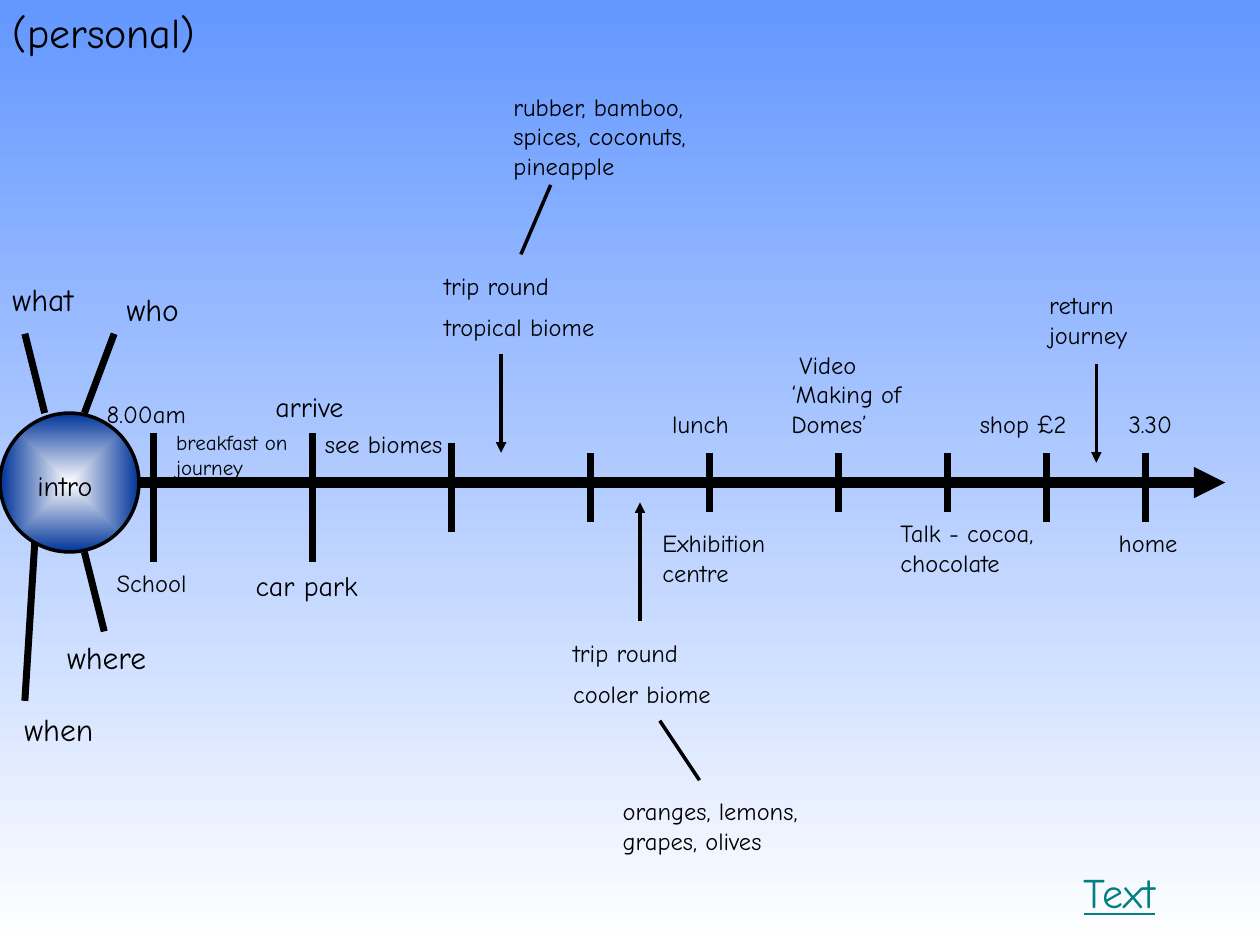
from lxml import etree
from pptx import Presentation, util as u
from pptx.dml.color import RGBColor
from pptx.enum import shapes, text
from pptx.oxml.ns import qn

# Grid: square cells, column 0 near the left edge, row 0 on the time axis
CELL = 10 / 127
LEFT, AXIS = 0.04, 3.83
FONT = "Comic Neue"
BLACK = "000000"

# Time ticks: column, cells above the axis, cells below it
TICKS = [(15, 5, 8), (31, 5, 8), (45, 4, 5), (59, 3, 4), (71, 3, 3),
         (84, 3, 3), (95, 3, 3), (105, 3, 4), (115, 3, 4)]

# Spokes of the intro circle: from column, row to column, row
SPOKES = [(4, -7, 2, -15), (8, -7, 11, -15), (2, 22, 3, 6), (10, 15, 8, 7)]
# Links from a biome to its crops
CROP_LINKS = [(52, -23, 55, -30), (66, 24, 70, 30)]
# Arrows onto the axis: column, start row, end row
ARROWS = [(50, -13, -3), (110, -12, -2), (64, 14, 2)]

# Labels: column, row, width in cells, lines, size, paragraphs
LABELS = [
    (11, -20, 17, 1, 18, ["who"]),
    (0.7, 22.3, 19, 1, 18, ["when"]),
    (5, 15, 14, 1, 18, ["where"]),
    (2, -2, 9, 1, 16, ["intro"]),
    (-0.5, -21, 11, 1, 18, ["what"]),
    (9, -9, 19, 1, 14, ["8.00am"]),
    (10, 8, 12, 1, 14, ["School"]),
    (26, -10, 13, 1, 16, ["arrive"]),
    (24, 8, 15, 1, 16, ["car park"]),
    (16, -6, 16, 2, 12, ["breakfast on journey"]),
    (31, -6, 16, 1, 14, ["see biomes"]),
    (43, -22, 21, 2, 14, ["trip round", "tropical biome"]),
    (50, -40, 27, 3, 14, ["rubber, bamboo, spices, coconuts, pineapple"]),
    (56, 15, 18, 2, 14, ["trip round", "cooler biome"]),
    (61, 31, 22, 2, 14, ["oranges, lemons, grapes, olives"]),
    (65, 4, 15, 2, 14, ["Exhibition centre"]),
    (66, -8, 10, 1, 14, ["lunch"]),
    (78, -14, 14, 3, 14, [" Video ‘Making of Domes’"]),
    (89, 3, 19, 2, 14, ["Talk - cocoa, chocolate"]),
    (97, -8, 13, 1, 14, ["shop £2"]),
    (104, -20, 13, 2, 14, ["return journey"]),
    (112, -8, 8, 1, 14, ["3.30"]),
    (111, 4, 9, 1, 14, ["home"]),
]


def rgb(value):
    return RGBColor.from_string(value)


def across(col):
    return u.Inches(LEFT + col * CELL)


def down(row):
    return u.Inches(AXIS + row * CELL)


def set_gradient(fill, first, last):
    fill.gradient()
    for stop, colour in zip(fill.gradient_stops, (first, last)):
        stop.color.rgb = rgb(colour)


def add_line(slide, start_col, start_row, end_col, end_row, weight, arrow=False):
    line = slide.shapes.add_connector(
        shapes.MSO_CONNECTOR.STRAIGHT, across(start_col), down(start_row),
        across(end_col), down(end_row))
    line.line.color.rgb = rgb(BLACK)
    line.line.width = u.Pt(weight)
    if arrow:
        etree.SubElement(line.line._get_or_add_ln(), qn("a:tailEnd"), type="triangle")
    etree.SubElement(line._element.spPr, qn("a:effectLst"))


def write(frame, paragraphs, size, colour=BLACK, underline=None):
    frame.word_wrap = True
    frame.vertical_anchor = text.MSO_ANCHOR.TOP
    for number, words in enumerate(paragraphs):
        paragraph = frame.add_paragraph() if number else frame.paragraphs[0]
        paragraph.alignment = text.PP_ALIGN.LEFT
        paragraph.line_spacing = 1.0
        paragraph.space_before = u.Pt(size / 2 if number else 0)
        run = paragraph.add_run()
        run.text = words
        run.font.name = FONT
        run.font.size = u.Pt(size)
        run.font.underline = underline
        run.font.color.rgb = rgb(colour)


def add_label(slide, col, row, width, lines, size, paragraphs, **style):
    height = 7.2 + lines * size * 1.17 + (len(paragraphs) - 1) * size / 2
    label = slide.shapes.add_textbox(
        across(col), down(row), u.Inches(width * CELL), u.Pt(height))
    write(label.text_frame, paragraphs, size, **style)


def add_intro_circle(slide):
    diameter = u.Inches(14 * CELL)
    circle = slide.shapes.add_shape(
        shapes.MSO_SHAPE.OVAL, across(-0.5), down(-7), diameter, diameter)
    circle.shadow.inherit = False
    circle.line.color.rgb = rgb(BLACK)
    circle.line.width = u.Pt(2)
    set_gradient(circle.fill, "FFFFFF", "003399")
    # Let the gradient spread from the centre to the outline
    gradient = circle._element.spPr.find(qn("a:gradFill"))
    gradient.remove(gradient.find(qn("a:lin")))
    spread = etree.SubElement(gradient, qn("a:path"), {"path": "shape"})
    etree.SubElement(spread, qn("a:fillToRect"),
                     dict.fromkeys("ltrb", "50000"))


def add_title(slide, words):
    title = slide.shapes.title
    title.left, title.top = 0, 0
    title.width, title.height = u.Inches(2.6), u.Inches(0.5)
    write(title.text_frame, [words], 24)


def main():
    deck = Presentation()
    deck.slide_width, deck.slide_height = u.Inches(10), u.Inches(7.5)
    slide = deck.slides.add_slide(deck.slide_layouts[5])

    # Background, blue at the top
    sky = slide.background.fill
    set_gradient(sky, "6397FF", "FFFFFF")
    sky.gradient_angle = 270

    add_title(slide, "(personal)")

    # Time axis and ticks
    add_line(slide, 13, 0, 123, 0, 6, arrow=True)
    for col, above, below in TICKS:
        add_line(slide, col, -above, col, below, 4)

    # Intro circle and its questions
    add_intro_circle(slide)
    for spoke in SPOKES:
        add_line(slide, *spoke, 4)

    # Events along the day
    for col, start, end in ARROWS:
        add_line(slide, col, start, col, end, 2, arrow=True)
    for link in CROP_LINKS:
        add_line(slide, *link, 2)
    for label in LABELS:
        add_label(slide, *label)

    # Underlined pointer in the corner
    add_label(slide, 107.5, 38.1, 18, 1, 24, ["Text"],
              colour="008080", underline=True)

    deck.save("out.pptx")


if __name__ == "__main__":
    main()
